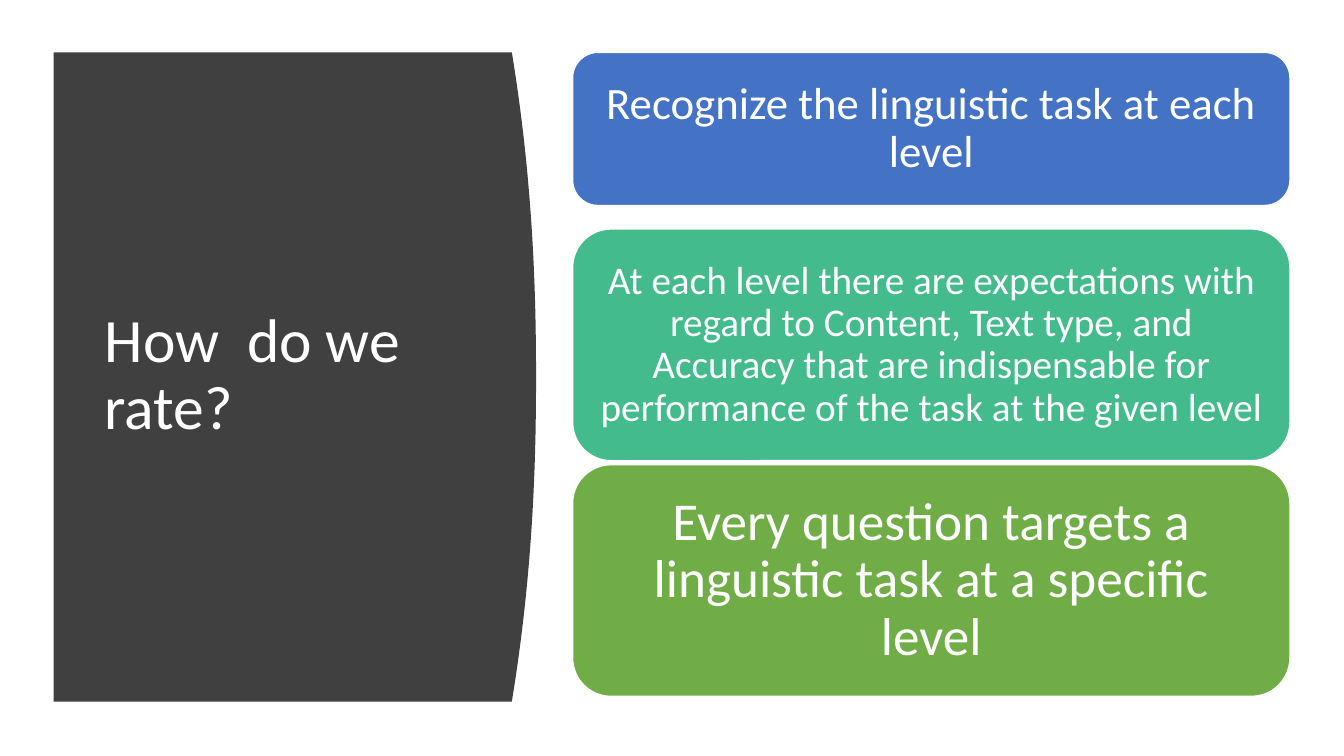
from pptx import Presentation
from pptx.dml.color import RGBColor
from pptx.enum.shapes import MSO_SHAPE
from pptx.enum.text import MSO_ANCHOR, PP_ALIGN
from pptx.util import Cm, Pt

ROUND = MSO_SHAPE.ROUNDED_RECTANGLE
MIDDLE = MSO_ANCHOR.MIDDLE
LEFT, CENTER = PP_ALIGN.LEFT, PP_ALIGN.CENTER

WHITE = RGBColor(0xFF, 0xFF, 0xFF)
DARK = RGBColor(0x40, 0x40, 0x40)
BLUE = RGBColor(0x44, 0x72, 0xC4)
TEAL = RGBColor(0x43, 0xBB, 0x8D)
GREEN = RGBColor(0x70, 0xAD, 0x47)

# top, height, colour, text size, inset, text
CARDS = [
    (1.32, 3.86, BLUE, 32, 0.33, "Recognize the linguistic task at each level"),
    (5.77, 5.84, TEAL, 28, 0.3,
     "At each level there are expectations with regard to Content, Text type, "
     "and Accuracy that are indispensable for performance of the task at the given level"),
    (11.71, 5.84, GREEN, 38, 0.4,
     "Every question targets a linguistic task at a specific level\t"),
]


def apply(target, values):
    for name, value in values.items():
        setattr(target, name, value)


class Deck:
    font = "Calibri"
    ink = WHITE

    def __init__(self, width, height):
        self.show = Presentation()
        apply(self.show, {"slide_width": Cm(width), "slide_height": Cm(height)})
        self.slide = self.show.slides.add_slide(self.show.slide_layouts[6])
        self.shapes = self.slide.shapes

    def paint(self, shape, color):
        shape.shadow.inherit = False
        shape.fill.solid()
        shape.fill.fore_color.rgb = color

    def label(self, shape, text, size, align, inset_x, inset_y):
        frame = shape.text_frame
        apply(frame, {
            "word_wrap": True, "vertical_anchor": MIDDLE,
            "margin_left": Cm(inset_x), "margin_right": Cm(inset_x),
            "margin_top": Cm(inset_y), "margin_bottom": Cm(inset_y),
        })
        para = frame.paragraphs[0]
        apply(para, {"alignment": align, "line_spacing": 0.9})
        run = para.add_run()
        run.text = text
        apply(run.font, {"name": self.font, "size": Pt(size)})
        run.font.color.rgb = self.ink

    def panel(self, left, top, width, height, bulge, color, steps=48):
        """Draw a block whose right side bows outward by bulge."""
        edge = []
        for step in range(steps + 1):
            part = step / steps
            bow = bulge * (1 - abs(2 * part - 1) ** 2.2)
            edge.append((Cm(left + width + bow), Cm(top + height * part)))
        pen = self.shapes.build_freeform(Cm(left), Cm(top))
        pen.add_line_segments(edge + [(Cm(left), Cm(top + height))], close=True)
        shape = pen.convert_to_shape()
        self.paint(shape, color)
        shape.line.fill.background()

    def title(self, left, top, width, height, text, size):
        box = self.shapes.add_textbox(Cm(left), Cm(top), Cm(width), Cm(height))
        self.label(box, text, size, LEFT, 0.25, 0.13)

    def card(self, left, top, width, height, color, size, inset, text):
        shape = self.shapes.add_shape(ROUND, Cm(left), Cm(top), Cm(width), Cm(height))
        self.paint(shape, color)
        shape.line.color.rgb = WHITE
        shape.line.width = Pt(1)
        self.label(shape, text, size, CENTER, inset, inset)


def main():
    deck = Deck(33.87, 19.05)
    deck.panel(1.35, 1.32, 11.55, 16.36, 0.61, DARK)
    deck.title(2.39, 2.82, 9.5, 13.31, "How  do we rate?", 44)
    for top, height, color, size, inset, text in CARDS:
        deck.card(14.43, top, 18.08, height, color, size, inset, text)
    deck.show.save("out.pptx")


if __name__ == "__main__":
    main()
